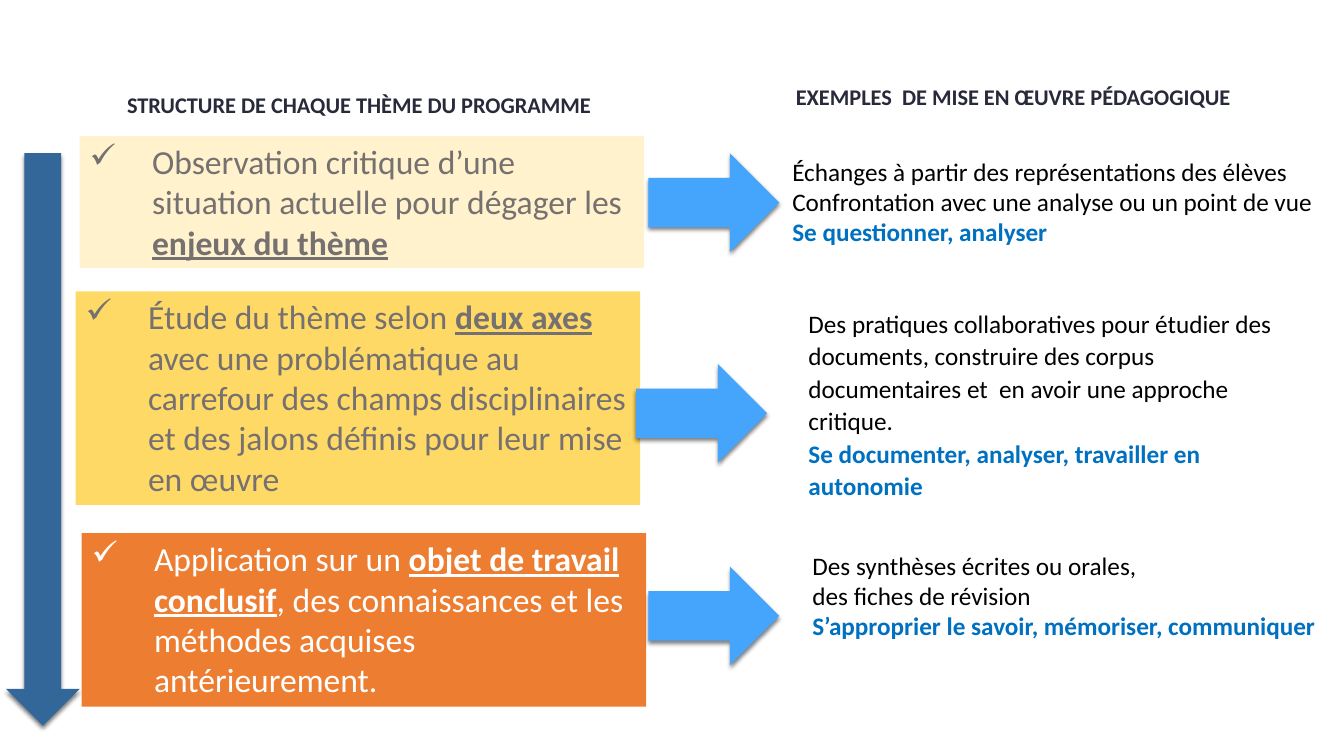
from lxml import etree
from pptx import Presentation
from pptx.dml.color import RGBColor
from pptx.enum.shapes import MSO_SHAPE as Preset
from pptx.enum.text import MSO_ANCHOR as Anchor, PP_ALIGN as Align
from pptx.oxml import parse_xml
from pptx.oxml.ns import nsdecls, qn
from pptx.util import Inches, Pt

INK = RGBColor(0x28, 0x2A, 0x3A)
BLACK = RGBColor(0, 0, 0)
WHITE = RGBColor(0xFF, 0xFF, 0xFF)
GREY = RGBColor(0x76, 0x71, 0x71)
SKILL_BLUE = RGBColor(0x00, 0x70, 0xC0)
ARROW_BLUE = RGBColor(0x45, 0xA4, 0xFC)
TIMELINE_BLUE = RGBColor(0x33, 0x66, 0x99)
CREAM = RGBColor(0xFF, 0xF2, 0xCC)
YELLOW = RGBColor(0xFF, 0xD9, 0x66)
ORANGE = RGBColor(0xED, 0x7D, 0x31)

SHADOW = (f'<a:effectLst {nsdecls("a")}><a:outerShdw blurRad="38100" dist="25400" '
          'dir="5400000" rotWithShape="0"><a:srgbClr val="000000">'
          '<a:alpha val="50000"/></a:srgbClr></a:outerShdw></a:effectLst>')


def write_text(frame, paragraphs, size=18, color=BLACK, bold=False, accent=None,
               underline=False, align=Align.LEFT, anchor=Anchor.TOP, wrap=True,
               inset=None, spacing=None, bullet=None):
    """Each paragraph is a list of (text, emphasised) runs."""
    frame.word_wrap, frame.vertical_anchor = wrap, anchor
    if inset is not None:
        frame.margin_left = frame.margin_right = Inches(inset)
        frame.margin_top = frame.margin_bottom = Inches(inset)
    for index, runs in enumerate(paragraphs):
        paragraph = frame.add_paragraph() if index else frame.paragraphs[0]
        paragraph.alignment = align
        if spacing:
            paragraph.line_spacing = spacing
        if bullet:
            properties = paragraph._p.get_or_add_pPr()
            properties.set("marL", str(Inches(0.62)))
            properties.set("indent", str(-Inches(0.62)))
            etree.SubElement(properties, qn("a:buChar")).set("char", bullet)
        for text, emphasised in runs:
            run = paragraph.add_run()
            run.text = text
            run.font.name, run.font.size = "Calibri", Pt(size)
            run.font.bold = bold or emphasised
            run.font.underline = underline and emphasised
            run.font.color.rgb = accent if emphasised and accent else color


def add_block(preset, box, fill, shadow=False):
    block = slide.shapes.add_shape(preset, *map(Inches, box))
    block.fill.solid()
    block.fill.fore_color.rgb = fill
    block.line.fill.background()
    block.shadow.inherit = False
    if shadow:
        properties = block._element.spPr
        properties.replace(properties.find(qn("a:effectLst")), parse_xml(SHADOW))
    return block


deck = Presentation()
deck.slide_width, deck.slide_height = Inches(13.33), Inches(7.5)
slide = deck.slides.add_slide(deck.slide_layouts[6])

# Column headings
headings = [
    ((1.2, 0.85, 6.31, 0.38), "STRUCTURE DE CHAQUE THÈME DU PROGRAMME", Align.LEFT),
    ((6.76, 0.77, 6.58, 0.38), "EXEMPLES  DE MISE EN ŒUVRE PÉDAGOGIQUE", Align.CENTER),
]
for box, title, align in headings:
    heading = slide.shapes.add_textbox(*map(Inches, box))
    write_text(heading.text_frame, [[(title, False)]], size=16, color=INK, bold=True,
               align=align, anchor=Anchor.MIDDLE, inset=0.06)

# Timeline down the left edge
add_block(Preset.DOWN_ARROW, (0.06, 1.52, 0.73, 5.68), TIMELINE_BLUE, shadow=True)

# Steps of each theme
steps = [
    ((0.79, 1.35, 5.6, 1.31), CREAM, GREY, [
        ("Observation critique d’une situation actuelle pour dégager les ", False),
        ("enjeux du thème", True)]),
    ((0.75, 2.89, 5.6, 2.12), YELLOW, GREY, [
        ("Étude du thème selon ", False),
        ("deux axes ", True),
        ("avec une problématique au carrefour des champs disciplinaires "
         "et des jalons définis pour leur mise en œuvre", False)]),
    ((0.81, 5.29, 5.6, 1.72), ORANGE, WHITE, [
        ("Application sur un ", False),
        ("objet de travail conclusif", True),
        (", des connaissances et les méthodes acquises antérieurement.", False)]),
]
for box, fill, color, runs in steps:
    step = add_block(Preset.RECTANGLE, box, fill)
    write_text(step.text_frame, [runs], size=24, color=color, underline=True, bullet="✓")

# Arrows from steps to examples
for left, top in [(6.43, 1.52), (6.31, 3.61), (6.43, 5.62)]:
    add_block(Preset.RIGHT_ARROW, (left, top, 1.3, 0.98), ARROW_BLUE, shadow=True)

# Teaching examples, each closing with the skills in blue
examples = [
    ((7.76, 1.5, 5.43, 1.01), False, None, [
        "Échanges à partir des représentations des élèves",
        "Confrontation avec une analyse ou un point de vue",
        "Se questionner, analyser"]),
    ((7.92, 2.99, 5.12, 2.03), True, 1.07, [
        "Des pratiques collaboratives pour étudier des documents, construire des "
        "corpus documentaires et  en avoir une approche critique.",
        "Se documenter, analyser, travailler en autonomie"]),
    ((7.96, 5.41, 5.22, 1.31), False, None, [
        "Des synthèses écrites ou orales,",
        "des fiches de révision",
        "S’approprier le savoir, mémoriser, communiquer"]),
]
for box, wrap, spacing, lines in examples:
    example = slide.shapes.add_textbox(*map(Inches, box))
    write_text(example.text_frame, [[(line, line == lines[-1])] for line in lines],
               accent=SKILL_BLUE, wrap=wrap, spacing=spacing)

deck.save("out.pptx")
